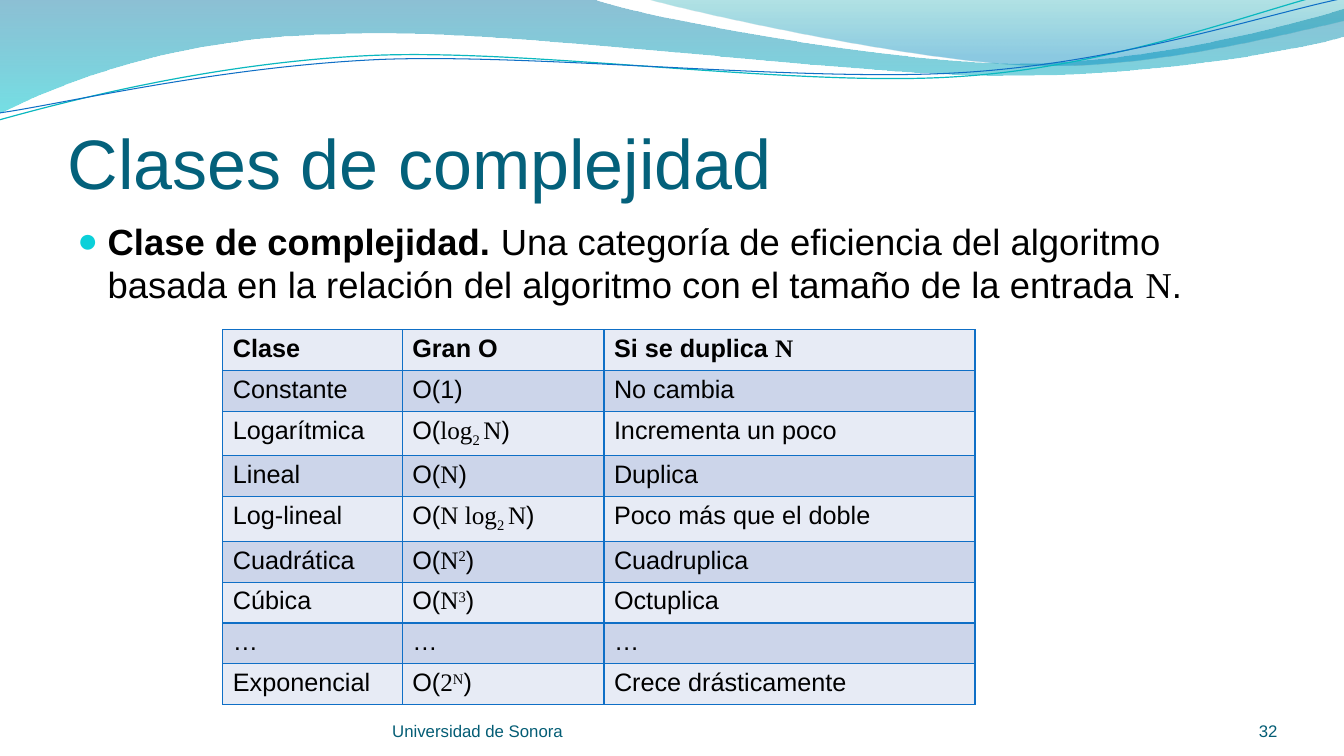
from lxml.etree import SubElement
from pptx import Presentation
from pptx.dml.color import RGBColor as RGB
from pptx.enum.text import MSO_ANCHOR as Anchor, PP_ALIGN as Align
from pptx.oxml.ns import qn
from pptx.util import Inches, Pt

SANS, SERIF = "Arial", "Times New Roman"
BLACK = RGB(0, 0, 0)
TITLE = RGB(0x04, 0x61, 0x7B)
FOOT = RGB(0x04, 0x5D, 0x75)
BLUE = RGB(0x0F, 0x6F, 0xC6)
TEAL = RGB(0x0A, 0xB8, 0xBF)
CYAN = RGB(0x0B, 0xD0, 0xD9)
BANDS = RGB(0xE7, 0xEB, 0xF5), RGB(0xCC, 0xD5, 0xEA)

# Each wave is a start point, then line ends (2 numbers) or curves (6 numbers).
# Fill stops are (position, colour, opacity in %).
FILLS = [
    ([(0, 0), (5.87, -0.01), (6.34, 0.17, 8.85, 0.63, 10.11, 0.63),
      (11.38, 0.63, 12.78, 0.26, 13.33, 0.09), (13.35, 0.36),
      (13.11, 0.44, 11.6, 0.76, 9.94, 0.75), (8.29, 0.75, 5.09, 0.28, 3.43, 0.34),
      (1.72, 0.36, 0.61, 0.83, -0.01, 1.13)],
     [(0, RGB(0, 0x74, 0xA1), 45), (1, RGB(0, 0xC6, 0xCF), 55)]),
    ([(6.39, -0.01), (6.79, 0.11, 9.09, 0.62, 10.25, 0.65),
      (11.41, 0.69, 12.82, 0.32, 13.33, 0.21), (13.33, 0)],
     [(0, RGB(0, 0xA1, 0xA9), 30), (0.8, RGB(0, 0x8B, 0xBF), 45)]),
]
LINES = [
    ([(-0.01, 1.19), (0.64, 1.01, 2.11, 0.62, 3.69, 0.55),
      (5.27, 0.48, 7.9, 0.87, 9.5, 0.76), (11.1, 0.66, 12.52, 0.08, 13.31, -0.1)],
     TEAL, 0.85),
    ([(0, 1.12), (0.63, 1.03, 2.18, 0.66, 3.78, 0.59),
      (5.37, 0.53, 7.96, 0.82, 9.55, 0.72), (11.15, 0.62, 12.55, 0.14, 13.34, -0.02)],
     BLUE, 0.75),
]

# Run kinds: "" sans, "t" serif, "_" serif subscript, "^" serif superscript.
LOG = [("2 ", "_"), ("N", "t"), (")", "")]
ROWS = [
    ("Clase", "Gran O", [("Si se duplica ", ""), ("N", "t")]),
    ("Constante", "O(1)", "No cambia"),
    ("Logarítmica", [("O(", ""), ("log", "t")] + LOG, "Incrementa un poco"),
    ("Lineal", [("O(", ""), ("N", "t"), (")", "")], "Duplica"),
    ("Log-lineal", [("O(", ""), ("N log", "t")] + LOG, "Poco más que el doble"),
    ("Cuadrática", [("O(", ""), ("N", "t"), ("2", "^"), (")", "")], "Cuadruplica"),
    ("Cúbica", [("O(", ""), ("N", "t"), ("3", "^"), (")", "")], "Octuplica"),
    ("…", "…", "…"),
    ("Exponencial", [("O(", ""), ("2", "t"), ("N", "^"), (")", "")],
     "Crece drásticamente"),
]
COLS = 1.78, 2, 3.68


def style(run, size, color, bold=False, kind=""):
    font = run.font
    font.name = SERIF if kind else SANS
    font.size, font.bold = Pt(size), bold
    font.color.rgb = color
    if kind in ("_", "^"):
        shift = "-25000" if kind == "_" else "30000"
        run._r.get_or_add_rPr().set("baseline", shift)


def write(para, parts, size, color, bold=False):
    if isinstance(parts, str):
        parts = [(parts, "")]
    for text, kind in parts:
        run = para.add_run()
        run.text = text
        style(run, size, color, bold, kind)


def add_wave(slide, wave, close):
    """Build the outline from all its points, then turn triples into curves."""
    pts = [(Inches(seg[i]), Inches(seg[i + 1]))
           for seg in wave for i in range(0, len(seg), 2)]
    form = slide.shapes.build_freeform(*pts[0], scale=1.0)
    form.add_line_segments(pts[1:], close=close)
    shape = form.convert_to_shape()
    shape.shadow.inherit = False
    steps = iter(list(shape.element.iter(qn("a:lnTo"))))
    for seg in wave[1:]:
        first = next(steps)
        if len(seg) == 6:
            curve = first.makeelement(qn("a:cubicBezTo"))
            first.addprevious(curve)
            for step in (first, next(steps), next(steps)):
                curve.append(step[0])
                step.getparent().remove(step)
    return shape


def add_waves(slide):
    for wave, stops in FILLS:
        shape = add_wave(slide, wave, True)
        shape.line.fill.background()
        shape.fill.gradient()
        shape.fill.gradient_angle = 270
        for stop, (pos, color, _) in zip(shape.fill.gradient_stops, stops):
            stop.position, stop.color.rgb = pos, color
        tints = shape.element.spPr.iter(qn("a:srgbClr"))
        for tint, (_, _, alpha) in zip(tints, stops):
            SubElement(tint, qn("a:alpha"), val=str(alpha * 1000))
    for wave, color, width in LINES:
        shape = add_wave(slide, wave, False)
        shape.fill.background()
        shape.line.color.rgb, shape.line.width = color, Pt(width)


def set_title(slide, x, y, w, h):
    title = slide.shapes.title
    title.left, title.top, title.width, title.height = map(Inches, (x, y, w, h))
    frame = title.text_frame
    frame.text = "Clases de complejidad"
    frame.vertical_anchor = Anchor.BOTTOM
    frame.margin_left = frame.margin_right = frame.margin_bottom = 0
    frame.margin_top = Inches(0.05)
    para = frame.paragraphs[0]
    para.alignment = Align.LEFT
    style(para.runs[0], 50, TITLE)


def add_body(slide, x, y, w, h):
    frame = slide.shapes.add_textbox(*map(Inches, (x, y, w, h))).text_frame
    frame.word_wrap = True
    para = frame.paragraphs[0]
    write(para, "Clase de complejidad.", 26, BLACK, True)
    write(para, [(" Una categoría de eficiencia del algoritmo basada en la relación "
                  "del algoritmo con el tamaño de la entrada ", ""),
                 ("N", "t"), (".", "")], 26, BLACK)
    props = para._p.get_or_add_pPr()
    props.set("marL", str(Inches(0.3)))
    props.set("indent", str(Inches(-0.3)))
    SubElement(SubElement(props, qn("a:buClr")), qn("a:srgbClr"), val=str(CYAN))
    SubElement(props, qn("a:buSzPct"), val="95000")
    SubElement(props, qn("a:buFont"), typeface=SANS)
    SubElement(props, qn("a:buChar"), char="●")


def add_foot(slide, text, align, x, y, w, h):
    frame = slide.shapes.add_textbox(*map(Inches, (x, y, w, h))).text_frame
    frame.word_wrap = True
    frame.vertical_anchor = Anchor.BOTTOM
    frame.margin_left = frame.margin_right = 0
    frame.margin_top = frame.margin_bottom = 0
    frame.paragraphs[0].alignment = align
    write(frame.paragraphs[0], text, 12, FOOT)


def set_edges(cell):
    props = cell._tc.get_or_add_tcPr()
    for side in "LRTB":
        edge = SubElement(props, qn(f"a:ln{side}"), w=str(Pt(1)))
        fill = SubElement(edge, qn("a:solidFill"))
        SubElement(fill, qn("a:srgbClr"), val=str(BLUE))


def add_grid(slide, x, y, w, h):
    grid = slide.shapes.add_table(len(ROWS), len(COLS),
                                  *map(Inches, (x, y, w, h))).table
    grid.first_row = grid.horz_banding = False
    for col, width in zip(grid.columns, COLS):
        col.width = Inches(width)
    for i, row in enumerate(ROWS):
        for j, parts in enumerate(row):
            cell = grid.cell(i, j)
            set_edges(cell)
            cell.fill.solid()
            cell.fill.fore_color.rgb = BANDS[i % 2]
            write(cell.text_frame.paragraphs[0], parts, 18, BLACK, i == 0)


def main():
    deck = Presentation()
    deck.slide_width, deck.slide_height = Inches(13.33), Inches(7.5)
    slide = deck.slides.add_slide(deck.slide_layouts[5])
    add_waves(slide)
    set_title(slide, 0.67, 0.77, 12, 1.25)
    add_body(slide, 0.67, 2.12, 12, 4.8)
    add_foot(slide, "Universidad de Sonora", Align.LEFT, 3.89, 6.95, 4.89, 0.4)
    add_foot(slide, "32", Align.RIGHT, 11.56, 6.95, 1.11, 0.4)
    add_grid(slide, 2.21, 3.27, sum(COLS), 3.65)
    deck.save("out.pptx")


if __name__ == "__main__":
    main()
